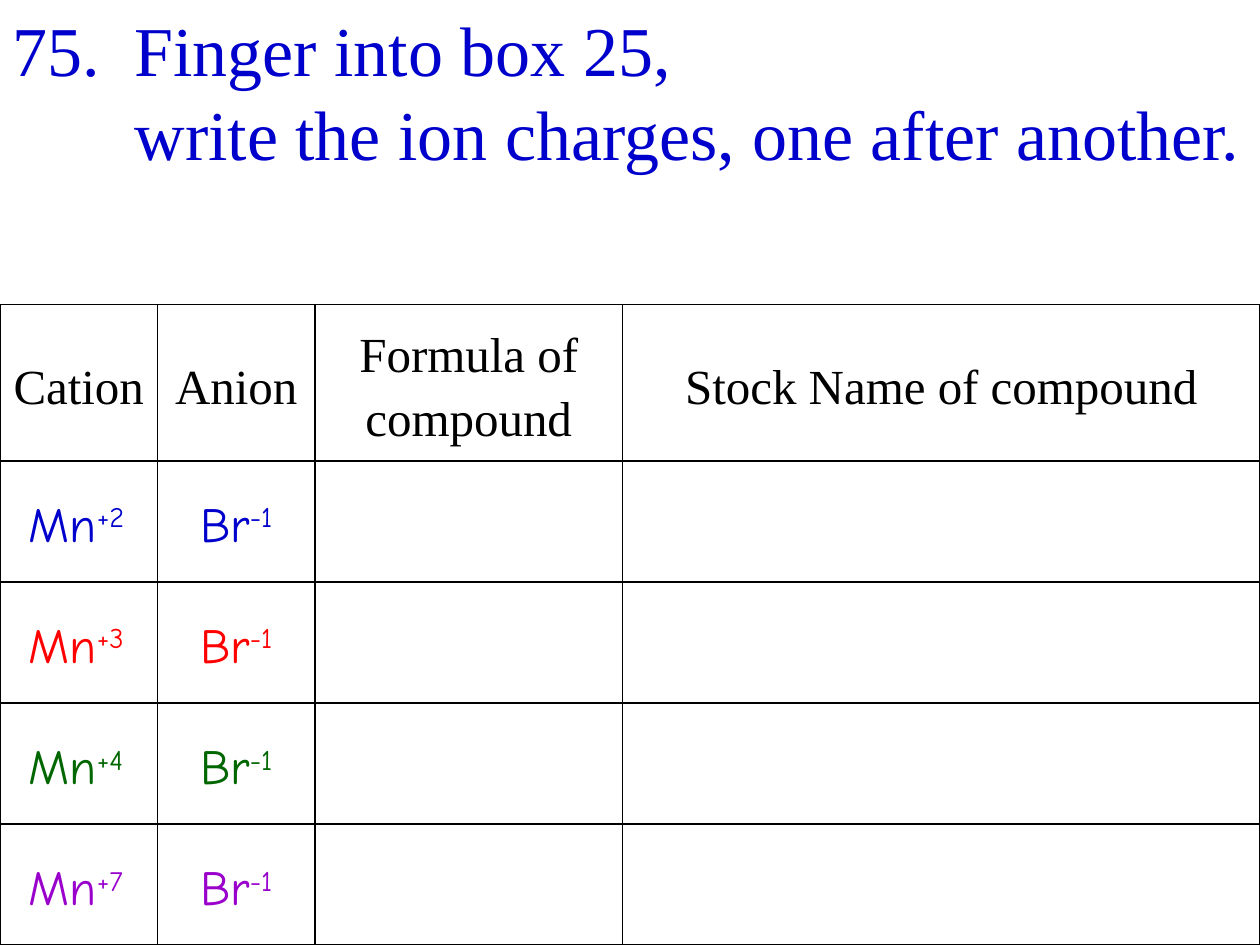
import pptx
import pptx.dml.color
import pptx.enum.text
import pptx.oxml
import pptx.oxml.ns
import pptx.util
from pptx.util import Cm

BLACK = pptx.dml.color.RGBColor(0x00, 0x00, 0x00)
WHITE = pptx.dml.color.RGBColor(0xFF, 0xFF, 0xFF)
BLUE = pptx.dml.color.RGBColor(0x00, 0x00, 0xCC)
RED = pptx.dml.color.RGBColor(0xFF, 0x00, 0x00)
GREEN = pptx.dml.color.RGBColor(0x00, 0x66, 0x00)
PURPLE = pptx.dml.color.RGBColor(0x99, 0x00, 0xCC)

SERIF = "Times New Roman"
HAND = "Comic Neue"
ALIGN = pptx.enum.text.PP_ALIGN
ANCHOR = pptx.enum.text.MSO_ANCHOR

HEADINGS = ["Cation", "Anion", "Formula of compound", "Stock Name of compound"]
COLUMN_SHARES = [0.125, 0.125, 0.244, 0.506]
HEADER_HEIGHT = Cm(3.15)
ION_ROWS = [("+2", BLUE), ("+3", RED), ("+4", GREEN), ("+7", PURPLE)]


def set_font(para, name, size, color):
    """Set the font of a whole paragraph."""
    para.font.name = name
    para.font.size = pptx.util.Pt(size)
    para.font.color.rgb = color


def add_heading(page, left, top, width, height):
    """Place the numbered instruction in the title placeholder."""
    box = page.shapes.title
    box.left, box.top, box.width, box.height = left, top, width, height
    frame = box.text_frame
    frame.word_wrap = True
    frame.auto_size = pptx.enum.text.MSO_AUTO_SIZE.NONE
    frame.vertical_anchor = ANCHOR.TOP
    para = frame.paragraphs[0]
    para.text = "75.\tFinger into box 25,\vwrite the ion charges, one after another."
    para.alignment = ALIGN.LEFT
    para.line_spacing = pptx.util.Pt(48)
    set_font(para, SERIF, 40, BLUE)
    properties = para._p.get_or_add_pPr()
    properties.set("marL", str(Cm(2.46)))
    properties.set("indent", str(-Cm(2.46)))


def format_cell(cell):
    """Give a cell a white fill, middle anchor and thin black borders."""
    cell.fill.solid()
    cell.fill.fore_color.rgb = WHITE
    cell.vertical_anchor = ANCHOR.MIDDLE
    properties = cell._tc.get_or_add_tcPr()
    for position, side in enumerate(("lnL", "lnR", "lnT", "lnB")):
        border = pptx.oxml.parse_xml(
            f'<a:{side} {pptx.oxml.ns.nsdecls("a")} w="12700"><a:solidFill>'
            f'<a:srgbClr val="{BLACK}"/></a:solidFill></a:{side}>'
        )
        properties.insert(position, border)


def write_cell(cell, text, font, color, space_before, charge=""):
    """Write a centred entry, followed by a raised charge if there is one."""
    para = cell.text_frame.paragraphs[0]
    para.alignment = ALIGN.CENTER
    para.line_spacing = 1.19
    para.space_before = pptx.util.Pt(space_before)
    set_font(para, font, 28, color)
    para.add_run().text = text
    if charge:
        span = para.add_run()
        span.text = charge
        span._r.get_or_add_rPr().set("baseline", "30000")


def add_ion_table(page, left, top, width, height):
    """Place the table of ions with blank columns for the answers."""
    frame = page.shapes.add_table(
        len(ION_ROWS) + 1, len(HEADINGS), left, top, width, height
    )
    table = frame.table
    table.first_row = table.horz_banding = False
    for column, share in zip(table.columns, COLUMN_SHARES):
        column.width = int(width * share)
    for row in table.rows:
        row.height = (height - HEADER_HEIGHT) // len(ION_ROWS)
    table.rows[0].height = HEADER_HEIGHT
    for cell in table.iter_cells():
        format_cell(cell)
    for index, heading in enumerate(HEADINGS):
        write_cell(table.cell(0, index), heading, SERIF, BLACK, 5.8)
    for index, (charge, color) in enumerate(ION_ROWS, start=1):
        cation = table.cell(index, 0)
        write_cell(cation, "Mn", HAND, color, 6.7, charge)
        cation.text_frame.paragraphs[0].alignment = ALIGN.LEFT
        cation.margin_left = Cm(0.58)
        write_cell(table.cell(index, 1), "Br", HAND, color, 6.7, "-1")


def main():
    """Build the deck and save it."""
    deck = pptx.Presentation()
    deck.slide_width, deck.slide_height = Cm(25.4), Cm(19.05)
    page = deck.slides.add_slide(deck.slide_layouts.get_by_name("Title Only"))
    add_heading(page, 0, 0, deck.slide_width, Cm(6.25))
    table_top = Cm(6.14)
    add_ion_table(
        page, 0, table_top, deck.slide_width, deck.slide_height - table_top
    )
    deck.save("out.pptx")


if __name__ == "__main__":
    main()
